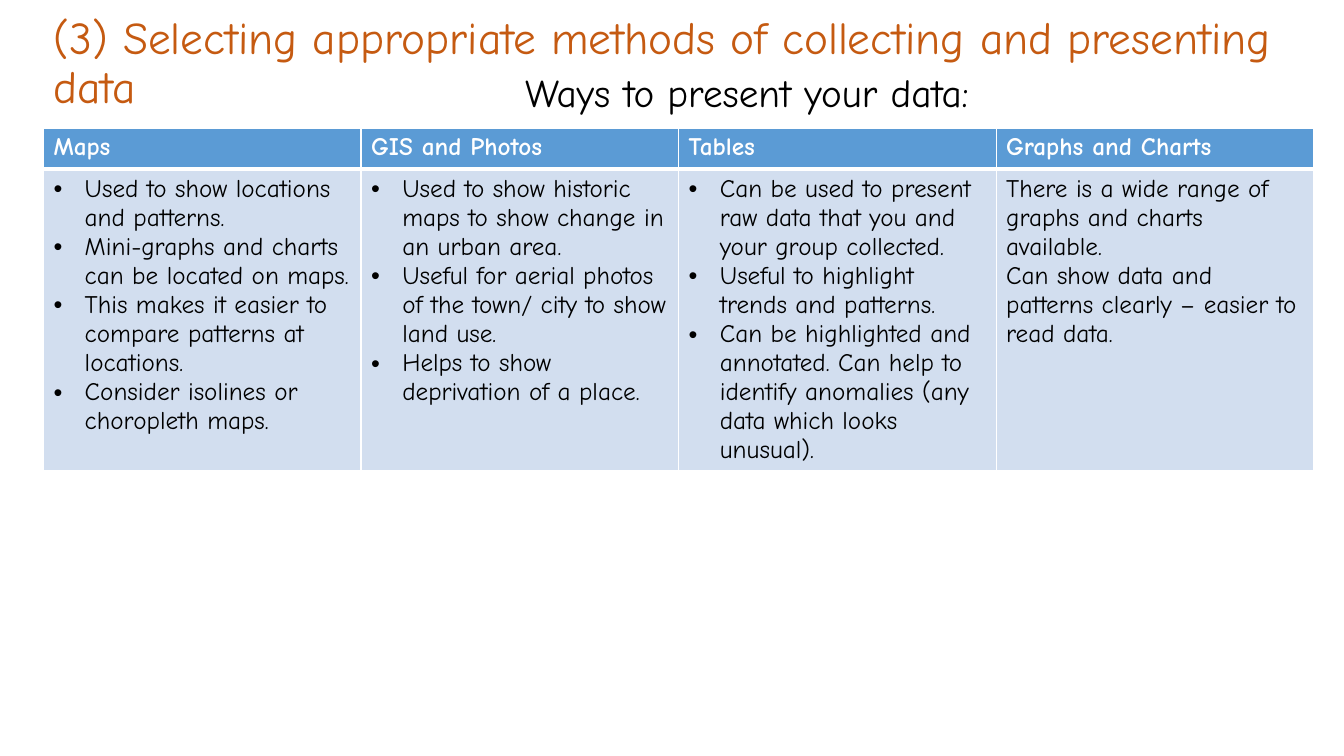
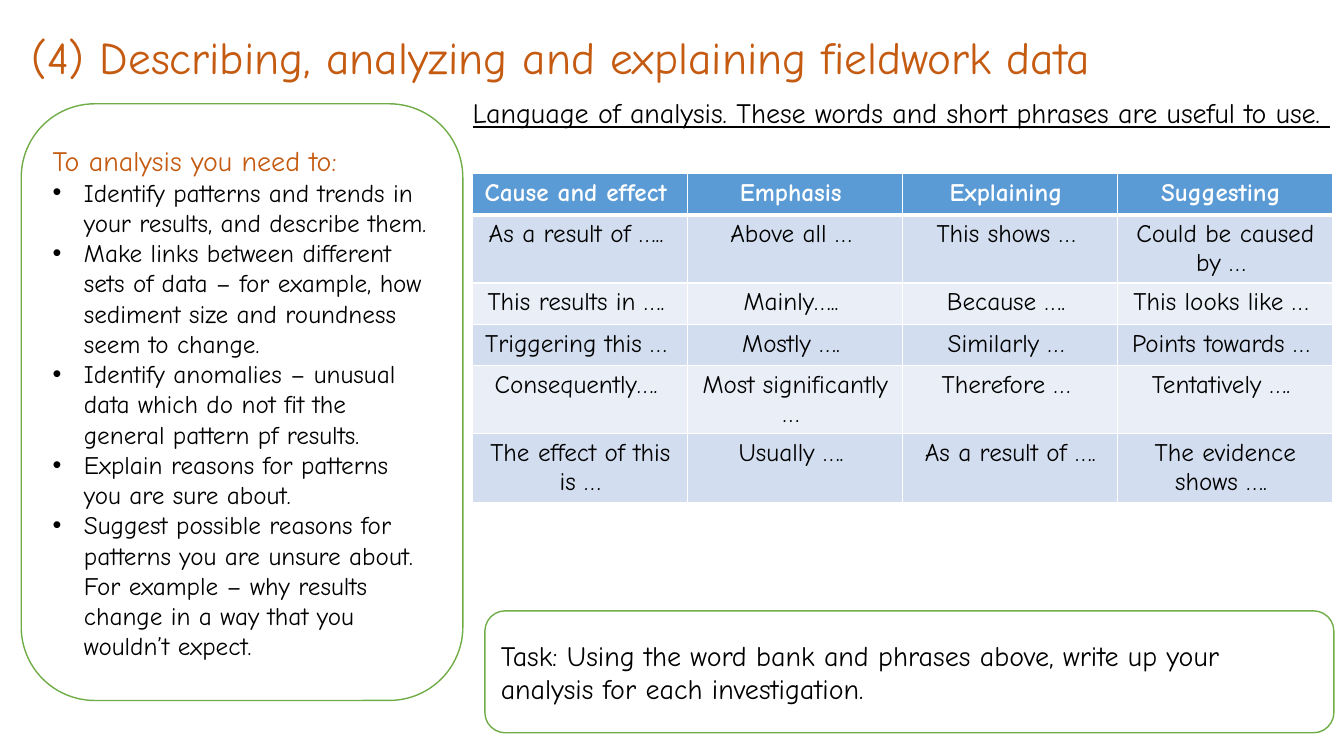
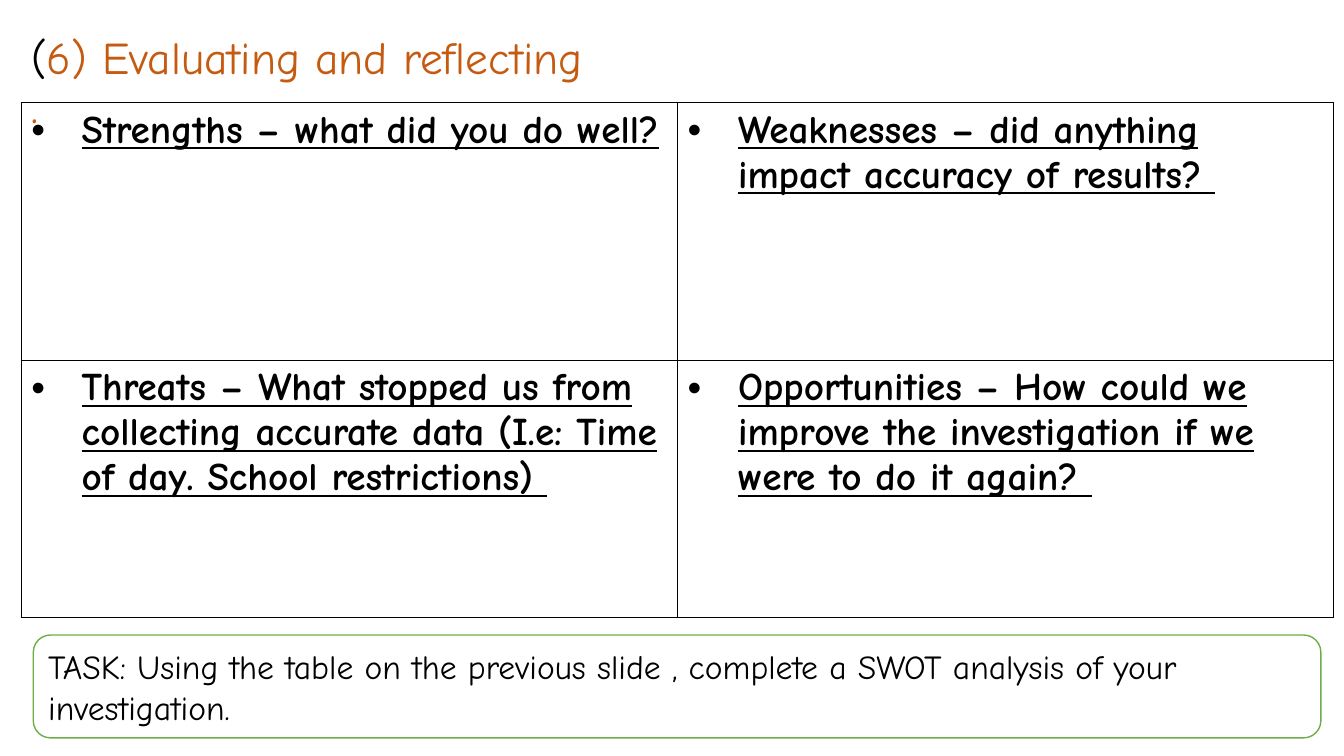
from dataclasses import dataclass

from lxml import etree
from pptx import Presentation
from pptx.dml.color import RGBColor
from pptx.enum.shapes import MSO_SHAPE
from pptx.enum.text import MSO_ANCHOR, MSO_AUTO_SIZE, PP_ALIGN
from pptx.oxml.ns import qn
from pptx.util import Inches, Pt

ROUNDED = MSO_SHAPE.ROUNDED_RECTANGLE
TOP, MIDDLE = MSO_ANCHOR.TOP, MSO_ANCHOR.MIDDLE
LEFT, CENTER = PP_ALIGN.LEFT, PP_ALIGN.CENTER
NO_FIT = MSO_AUTO_SIZE.NONE
TITLE_AND_BODY, TITLE_ONLY = 1, 5
SLIDE_W, SLIDE_H = Inches(13.33), Inches(7.5)


@dataclass(frozen=True)
class Theme:
    font: str = "Comic Neue"
    heading: str = "C55A11"
    ink: str = "000000"
    paper: str = "FFFFFF"
    outline: str = "70AD47"
    header: str = "5B9BD5"
    bands: tuple = ("D2DEEF", "EAEFF7")
    title_size: float = 32.4
    large: int = 28
    task: int = 24
    lead: int = 20
    body: int = 18
    line_spacing: float = 0.9


THEME = Theme()


@dataclass(frozen=True)
class Box:
    """A region in percent of the slide's width and height."""
    left: float
    top: float
    width: float
    height: float

    def lengths(self):
        return (int(SLIDE_W * self.left / 100), int(SLIDE_H * self.top / 100),
                int(SLIDE_W * self.width / 100), int(SLIDE_H * self.height / 100))

    def place(self, shape):
        shape.left, shape.top, shape.width, shape.height = self.lengths()


# ---- Text ----
def style(paragraph, size, color=THEME.ink, bold=False, underline=False, align=LEFT):
    paragraph.alignment = align
    for run in paragraph.runs:
        font = run.font
        font.name, font.size, font.bold, font.underline = THEME.font, Pt(size), bold, underline
        font.color.rgb = RGBColor.from_string(color)


def set_bullet(paragraph, indent):
    """Hang a bullet by the indent in inches; an indent of 0 removes it."""
    props = paragraph._p.get_or_add_pPr()
    props.set("marL", str(Inches(indent)))
    props.set("indent", str(-Inches(indent)))
    if indent:
        etree.SubElement(props, qn("a:buFont")).set("typeface", "Arial")
        etree.SubElement(props, qn("a:buChar")).set("char", "•")
    else:
        etree.SubElement(props, qn("a:buNone"))


def fill_placeholder(placeholder, box, text, size, color):
    box.place(placeholder)
    frame = placeholder.text_frame
    frame.text = text
    frame.word_wrap, frame.auto_size, frame.vertical_anchor = True, NO_FIT, TOP
    for paragraph in frame.paragraphs:
        style(paragraph, size, color)
        paragraph.line_spacing = THEME.line_spacing
        paragraph.space_before = Pt(0)
        set_bullet(paragraph, 0)


def add_titled_slide(deck, layout, box, title):
    slide = deck.slides.add_slide(deck.slide_layouts[layout])
    fill_placeholder(slide.shapes.title, box, title, THEME.title_size, THEME.heading)
    return slide


def add_lead_line(slide, box, text):
    frame = slide.shapes.add_textbox(*box.lengths()).text_frame
    frame.word_wrap = True
    frame.text = text
    style(frame.paragraphs[0], THEME.lead, underline=True)


# ---- Rounded panels ----
def add_panel(slide, box, text, size):
    panel = slide.shapes.add_shape(ROUNDED, *box.lengths())
    panel.shadow.inherit = False
    panel.fill.solid()
    panel.fill.fore_color.rgb = RGBColor.from_string(THEME.paper)
    panel.line.color.rgb = RGBColor.from_string(THEME.outline)
    panel.line.width = Pt(1)
    frame = panel.text_frame
    frame.word_wrap, frame.vertical_anchor = True, MIDDLE
    frame.text = text
    for paragraph in frame.paragraphs:
        style(paragraph, size)
    return frame.paragraphs


def add_checklist_panel(slide, box, heading, points):
    first, *rest = add_panel(slide, box, "\n".join([heading, *points]), THEME.body)
    style(first, THEME.lead, THEME.heading)
    for paragraph in rest:
        set_bullet(paragraph, 0.31)


# ---- Tables ----
def set_borders(cell, color, bottom=1):
    props = cell._tc.get_or_add_tcPr()
    for place, side in enumerate("LRTB"):
        line = etree.Element(qn(f"a:ln{side}"))
        line.set("w", str(Pt(bottom if side == "B" else 1)))
        fill = etree.SubElement(line, qn("a:solidFill"))
        etree.SubElement(fill, qn("a:srgbClr")).set("val", color)
        props.insert(place, line)


def add_grid(slide, box, rows, row_shares):
    left, top, width, height = box.lengths()
    columns = len(rows[0])
    table = slide.shapes.add_table(len(rows), columns, left, top, width, height).table
    table.first_row = table.horz_banding = False
    for column in table.columns:
        column.width = width // columns
    for row, share in zip(table.rows, row_shares):
        row.height = int(height * share / sum(row_shares))
    for r, texts in enumerate(rows):
        for c, text in enumerate(texts):
            table.cell(r, c).text_frame.text = text
    return table


def add_banded_table(slide, box, rows, row_shares, align=LEFT, bulleted_columns=0):
    table = add_grid(slide, box, rows, row_shares)
    for r, row in enumerate(table.rows):
        is_header = r == 0
        for c, cell in enumerate(row.cells):
            cell.fill.solid()
            band = THEME.header if is_header else THEME.bands[(r - 1) % 2]
            cell.fill.fore_color.rgb = RGBColor.from_string(band)
            set_borders(cell, THEME.paper, bottom=3 if is_header else 1)
            for paragraph in cell.text_frame.paragraphs:
                style(paragraph, THEME.body, THEME.paper if is_header else THEME.ink,
                      bold=is_header, align=align)
                if not is_header and c < bulleted_columns:
                    set_bullet(paragraph, 0.31)


def add_swot_table(slide, box, rows):
    for cell in add_grid(slide, box, rows, (1, 1)).iter_cells():
        cell.fill.background()
        set_borders(cell, THEME.ink)
        prompt = cell.text_frame.paragraphs[0]
        style(prompt, THEME.large, bold=True, underline=True)
        set_bullet(prompt, 0.5)


# ---- Content ----
PRESENTING = [
    ["Maps", "GIS and Photos", "Tables", "Graphs and Charts"],
    ["Used to show locations and patterns.\n"
     "Mini-graphs and charts can be located on maps.\n"
     "This makes it easier to compare patterns at locations.\n"
     "Consider isolines or choropleth maps.",
     "Used to show historic maps to show change in an urban area.\n"
     "Useful for aerial photos of the town/ city to show land use.\n"
     "Helps to show deprivation of a place.",
     "Can be used to present raw data that you and your group collected.\n"
     "Useful to highlight trends and patterns.\n"
     "Can be highlighted and annotated. Can help to identify anomalies "
     "(any data which looks unusual).",
     "There is a wide range of graphs and charts available.\n"
     "Can show data and patterns clearly – easier to read data."],
]
ANALYSIS_STEPS = [
    "Identify patterns and trends in your results, and describe them.",
    "Make links between different sets of data – for example, how sediment size "
    "and roundness seem to change.",
    "Identify anomalies – unusual data which do not fit the general pattern pf results.",
    "Explain reasons for patterns you are sure about.",
    "Suggest possible reasons for patterns you are unsure about. For example – why "
    "results change in a way that you wouldn’t expect.",
]
PHRASES = [
    ["Cause and effect ", "Emphasis ", "Explaining ", "Suggesting "],
    ["As a result of ….. ", "Above all … ", "This shows … ", "Could be caused by … "],
    ["This results in …. ", "Mainly….. ", "Because …. ", "This looks like … "],
    ["Triggering this … ", "Mostly …. ", "Similarly … ", "Points towards … "],
    ["Consequently…. ", "Most significantly … ", "Therefore … ", "Tentatively …. "],
    ["The effect of this is …", "Usually …. ", "As a result of ….", "The evidence shows …. "],
]
SWOT = [
    ["Strengths – what did you do well?",
     "Weaknesses – did anything impact accuracy of results? "],
    ["Threats – What stopped us from collecting accurate data "
     "(I.e: Time of day. School restrictions) ",
     "Opportunities – How could we improve the investigation if we were to do it again? "],
]
TITLE_BOX = Box(1.58, 4, 98.42, 10.93)


# ---- Slides ----
def build_presenting_slide(deck):
    slide = add_titled_slide(
        deck, TITLE_AND_BODY, Box(3.23, 1.33, 95.5, 14),
        "(3) Selecting appropriate methods of collecting and presenting data")
    fill_placeholder(slide.placeholders[1], Box(38.33, 9.07, 60, 7.5),
                     "Ways to present your data:", THEME.large, THEME.ink)
    add_banded_table(slide, Box(3.23, 16.93, 94.52, 45.07), PRESENTING, (0.41, 2.97),
                     bulleted_columns=3)


def build_analysis_slide(deck):
    slide = add_titled_slide(deck, TITLE_ONLY, TITLE_BOX,
                             "(4) Describing, analyzing and explaining fieldwork data")
    add_checklist_panel(slide, Box(1.58, 13.73, 32.86, 78.93),
                        "To analysis you need to:", ANALYSIS_STEPS)
    add_banded_table(slide, Box(35.18, 22.93, 63.99, 43.2), PHRASES,
                     (0.41, 0.67, 0.41, 0.41, 0.67, 0.67), align=CENTER)
    add_lead_line(slide, Box(34.43, 12, 65.57, 10.27),
                  "Language of analysis. These words and short phrases are useful to use. ")
    add_panel(slide, Box(36.08, 80.8, 63.17, 16.13),
              "Task: Using the word bank and phrases above, write up your analysis "
              "for each investigation.", THEME.lead)


def build_evaluation_slide(deck):
    slide = add_titled_slide(deck, TITLE_ONLY, TITLE_BOX, "(\n.")
    # The opening bracket is black, the rest of the title keeps the heading colour
    heading, dot = slide.shapes.title.text_frame.paragraphs
    heading.add_run().text = "6) Evaluating and reflecting"
    style(heading, THEME.title_size, THEME.heading)
    heading.runs[0].font.color.rgb = RGBColor.from_string(THEME.ink)
    add_panel(slide, Box(2.48, 84, 95.8, 13.6),
              "TASK: Using the table on the previous slide , complete a SWOT analysis "
              "of your investigation.", THEME.task)
    add_swot_table(slide, Box(1.58, 13.6, 97.67, 68.13), SWOT)


def main():
    deck = Presentation()
    deck.slide_width, deck.slide_height = SLIDE_W, SLIDE_H
    build_presenting_slide(deck)
    build_analysis_slide(deck)
    build_evaluation_slide(deck)
    deck.save("out.pptx")


if __name__ == "__main__":
    main()
